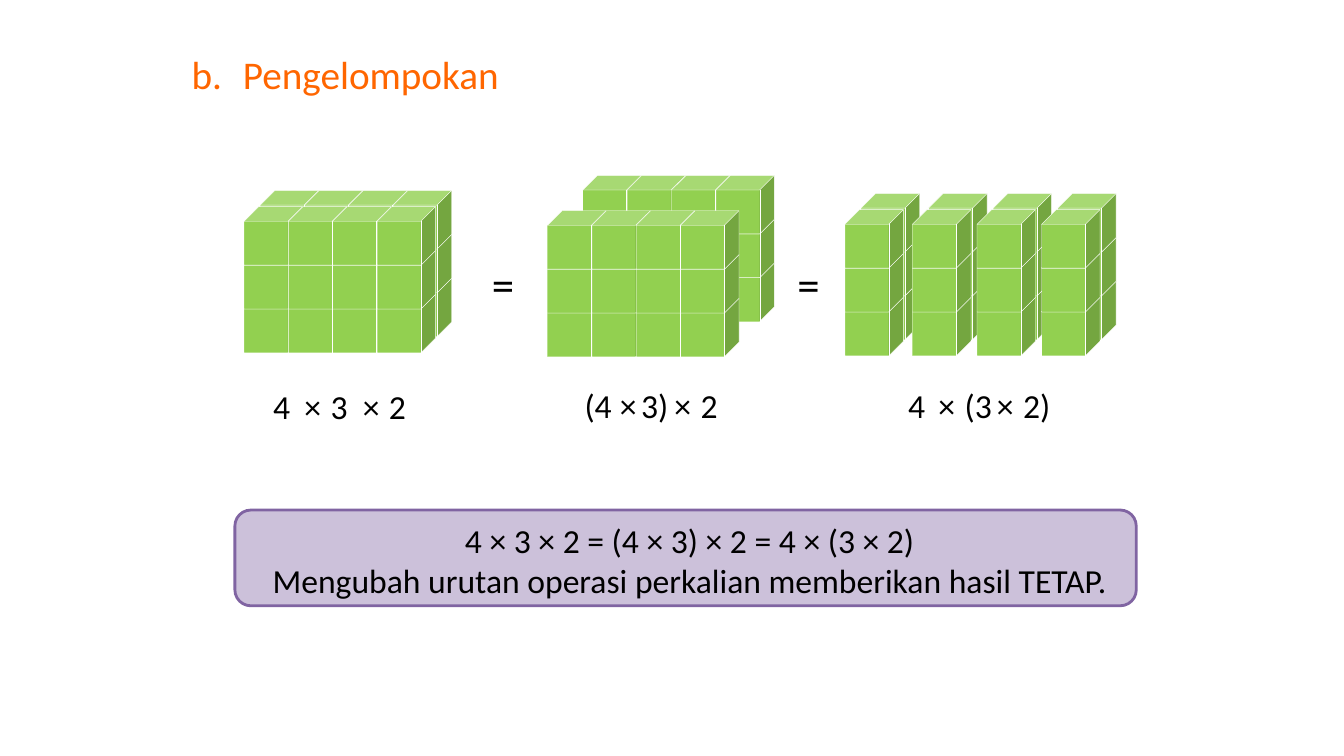
"""Build the slide on grouping the factors of a multiplication."""
from lxml import etree
from pptx import Presentation
from pptx import util as u
from pptx.dml.color import RGBColor
from pptx.enum import shapes, text
from pptx.oxml import ns

ORANGE = RGBColor(0xFF, 0x66, 0x00)
BLACK = RGBColor(0x00, 0x00, 0x00)
WHITE = RGBColor(0xFF, 0xFF, 0xFF)
GREEN = RGBColor(0x92, 0xD0, 0x50)
LILAC = RGBColor(0xCC, 0xC1, 0xDA)
PURPLE = RGBColor(0x80, 0x64, 0xA2)

CUBE_SIZE = 0.58
COLUMN_STEP = 0.44
ROW_STEP = 0.435
ROWS = 3

FACTOR_TOP = {"height": u.Inches(0.5)}
FRAME_FORMAT = {
    "word_wrap": False,
    "auto_size": text.MSO_AUTO_SIZE.SHAPE_TO_FIT_TEXT,
    "vertical_anchor": text.MSO_ANCHOR.TOP,
}
CONCLUSION_FORMAT = {
    "word_wrap": True,
    "vertical_anchor": text.MSO_ANCHOR.TOP,
    "margin_left": u.Inches(0.18),
    "margin_top": u.Inches(0.05),
}

EXPRESSIONS = [
    (3.78, [(2.61, "4"), (2.92, "×"), (3.18, "3"), (3.5, "×"), (3.76, "2")]),
    (3.77, [(5.7, "(4"), (6.05, "×"), (6.26, "3)"), (6.59, "×"), (6.85, "2")]),
    (3.77, [(8.91, "4"), (9.21, "×"), (9.47, "(3"), (9.79, "×"), (10.05, "2)")]),
]
CONCLUSION = [
    "4 × 3 × 2 = (4 × 3) × 2 = 4 × (3 × 2)",
    "Mengubah urutan operasi perkalian memberikan hasil TETAP.",
]


def apply_format(target, values):
    """Set every attribute named in values on target."""
    for attribute, value in values.items():
        setattr(target, attribute, value)


def write_line(paragraph, words, size, color, align=text.PP_ALIGN.LEFT):
    """Write one formatted run into a paragraph."""
    paragraph.alignment = align
    run = paragraph.add_run()
    run.text = words
    apply_format(run.font, {"name": "Calibri", "size": u.Pt(size)})
    run.font.color.rgb = color


def add_label(slide, left, top, width, height, words, size):
    """Add a single line of free text."""
    label = slide.shapes.add_textbox(*map(u.Inches, (left, top, width, height)))
    apply_format(label.text_frame, FRAME_FORMAT)
    write_line(label.text_frame.paragraphs[0], words, size, BLACK)


def add_solid(parent, preset, box, fill, line, weight):
    """Add a filled and outlined preset shape without shadow."""
    solid = parent.shapes.add_shape(preset, *map(u.Inches, box))
    solid.shadow.inherit = False
    solid.fill.solid()
    solid.fill.fore_color.rgb = fill
    solid.line.color.rgb = line
    solid.line.width = u.Pt(weight)
    return solid


def add_block(slide, columns, layers):
    """Group the cubes of a block, given the left and top of each layer."""
    block = slide.shapes.add_group_shape()
    for left, top in layers:
        for column in range(columns):
            for row in reversed(range(ROWS)):
                box = (left + column * COLUMN_STEP, top + row * ROW_STEP,
                       CUBE_SIZE, CUBE_SIZE)
                add_solid(block, shapes.MSO_SHAPE.CUBE, box, GREEN, WHITE, 0.25)


def add_title(slide):
    """Place the lettered heading in the title placeholder."""
    title = slide.shapes.title
    place = dict(zip(("left", "top", "width", "height"),
                     map(u.Inches, (1.8, 0.45, 3.28, 0.57))))
    apply_format(title, place)
    apply_format(title.text_frame, FRAME_FORMAT)
    heading = title.text_frame.paragraphs[0]
    tabs = etree.SubElement(heading._p.get_or_add_pPr(), ns.qn("a:tabLst"))
    etree.SubElement(tabs, ns.qn("a:tab"), pos=str(u.Inches(0.51)), algn="l")
    write_line(heading, "b.\tPengelompokan", 28, ORANGE)


def add_conclusion(slide):
    """Add the rounded panel that states the rule."""
    panel = add_solid(slide, shapes.MSO_SHAPE.ROUNDED_RECTANGLE,
                      (2.33, 5.06, 8.94, 0.95), LILAC, PURPLE, 2)
    frame = panel.text_frame
    apply_format(frame, CONCLUSION_FORMAT)
    for index, words in enumerate(CONCLUSION):
        paragraph = frame.add_paragraph() if index else frame.paragraphs[0]
        write_line(paragraph, words, 24, BLACK, text.PP_ALIGN.CENTER)


def main():
    """Assemble and save the slide."""
    deck = Presentation()
    deck.slide_width, deck.slide_height = u.Inches(13.33), u.Inches(7.5)
    slide = deck.slides.add_slide(deck.slide_layouts.get_by_name("Title Only"))

    add_title(slide)
    add_conclusion(slide)
    add_block(slide, 4, [(2.58, 1.89), (2.42, 2.05)])
    add_block(slide, 4, [(5.78, 1.74), (5.43, 2.09)])
    for left in (8.38, 9.05, 9.69, 10.33):
        add_block(slide, 1, [(left + 0.16, 1.92), (left, 2.08)])
    for top, factors in EXPRESSIONS:
        for left, words in factors:
            width = 0.27 + 0.1 * len(words)
            add_label(slide, left, top, width, 0.5, words, 24)
    for left in (4.78, 7.81):
        add_label(slide, left, 2.5, 0.43, 0.64, "=", 32)

    deck.save("out.pptx")


if __name__ == "__main__":
    main()
